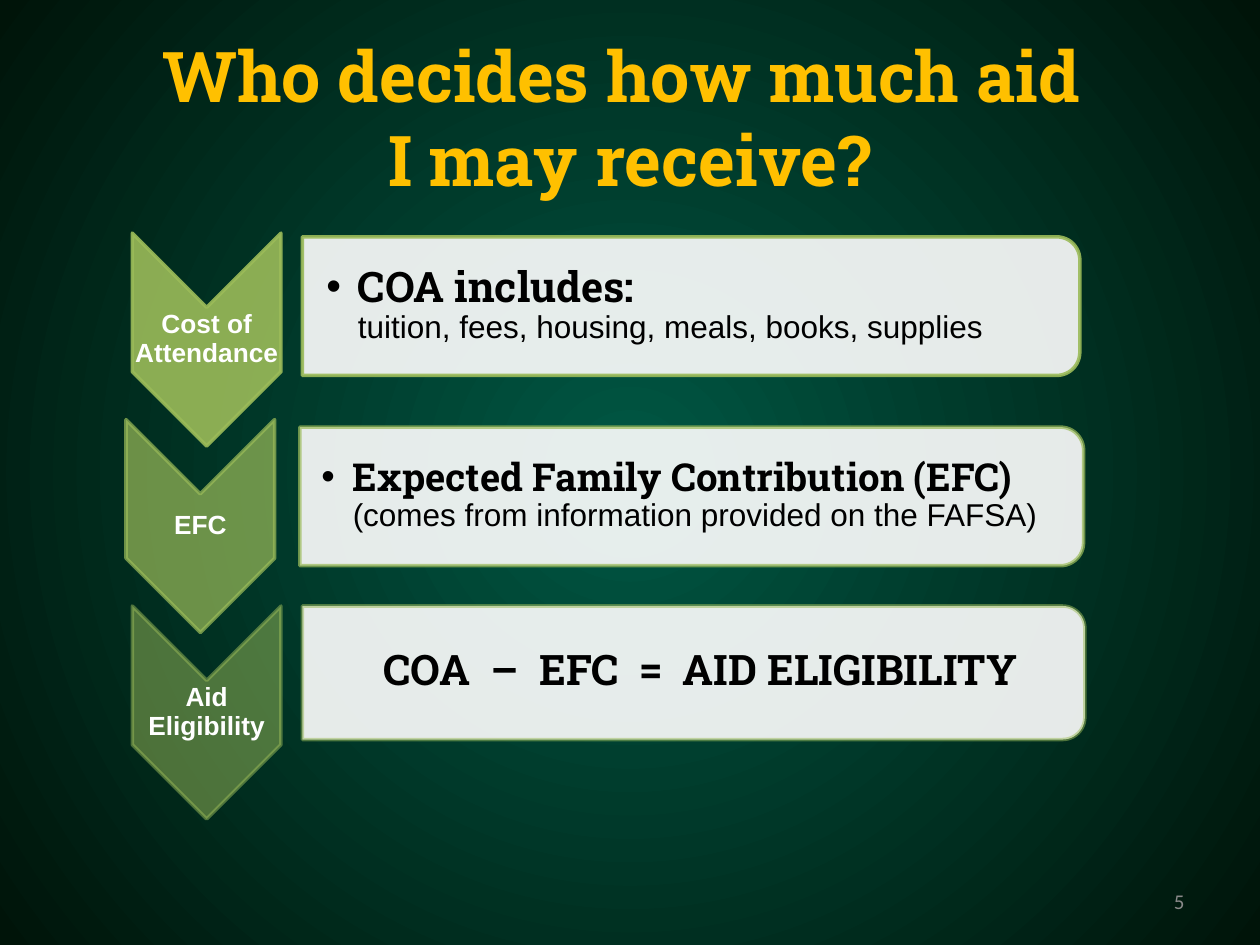
from lxml import etree
from pptx import Presentation
from pptx.dml.color import RGBColor
from pptx.enum.shapes import MSO_SHAPE
from pptx.enum.text import MSO_ANCHOR, PP_ALIGN
from pptx.oxml.ns import qn
from pptx.util import Inches, Pt

CHEVRON, PANEL = MSO_SHAPE.CHEVRON, MSO_SHAPE.ROUND_2_SAME_RECTANGLE
MIDDLE = MSO_ANCHOR.MIDDLE
LEFT, CENTER, RIGHT = PP_ALIGN.LEFT, PP_ALIGN.CENTER, PP_ALIGN.RIGHT
GREEN, WHITE, BLACK, GOLD, GREY = "9BBB59", "FFFFFF", "000000", "FFC000", "898989"
SLAB, SANS = "Roboto Slab", "Arial"


def color(hex_string):
    return RGBColor.from_string(hex_string)


def paint(fill, hex_string, opacity):
    fill.solid()
    fill.fore_color.rgb = color(hex_string)
    srgb = fill._xPr.find(f"{qn('a:solidFill')}/{qn('a:srgbClr')}")
    etree.SubElement(srgb, qn("a:alpha"), val=str(opacity * 1000))


def style_run(r, size, font, hex_string, bold=False):
    r.font.size, r.font.name, r.font.bold = Pt(size), font, bold
    r.font.color.rgb = color(hex_string)


def add_background(s):
    fill = s.background.fill
    fill.gradient()
    for stop, (position, hex_string) in zip(
            fill.gradient_stops, [(0.02, "005643"), (1, "001409")]):
        stop.position = position
        stop.color.rgb = color(hex_string)
    grad = s.element.find(f".//{qn('a:gradFill')}")
    grad.remove(grad.find(qn("a:lin")))
    circle = etree.SubElement(grad, qn("a:path"), path="circle")
    etree.SubElement(circle, qn("a:fillToRect"), l="50000", t="50000",
                     r="50000", b="50000")


def add_title(s, lines, left, top, width, height):
    title = s.shapes.title
    title.left, title.top = Inches(left), Inches(top)
    title.width, title.height = Inches(width), Inches(height)
    tf = title.text_frame
    tf.vertical_anchor = MIDDLE
    tf.text = "\v".join(lines)
    p = tf.paragraphs[0]
    p.alignment = CENTER
    for r in p.runs:
        style_run(r, 40, SLAB, GOLD, True)


def add_turned_shape(s, kind, left, top, width, height, fill, opacity, line_opacity):
    cx, cy = left + width / 2, top + height / 2
    sp = s.shapes.add_shape(kind, Inches(cx - height / 2), Inches(cy - width / 2),
                            Inches(height), Inches(width))
    sp.rotation = 90
    sp.shadow.inherit = False
    paint(sp.fill, fill, opacity)
    sp.line.width = Pt(2)
    paint(sp.line.fill, GREEN, line_opacity)


def add_text(s, left, top, width, height, align, margins=None):
    tf = s.shapes.add_textbox(Inches(left), Inches(top),
                              Inches(width), Inches(height)).text_frame
    tf.word_wrap = True
    tf.vertical_anchor = MIDDLE
    if margins:
        tf.margin_left = Inches(margins[0])
        tf.margin_top = tf.margin_right = tf.margin_bottom = Inches(margins[1])
    p = tf.paragraphs[0]
    p.alignment = align
    return p


def add_run(p, text, *style):
    r = p.add_run()
    r.text = text
    style_run(r, *style)


def add_step(s, label, left, top, opacity):
    width, height = 1.18, 1.69
    add_turned_shape(s, CHEVRON, left, top, width, height, GREEN, opacity, opacity)
    p = add_text(s, left, top + 0.59, width, 0.51, CENTER, (0.01, 0.01))
    p.line_spacing = 0.9
    add_run(p, label, 15, SANS, WHITE, True)


def add_panel(s, heading, size, detail, left, top, width, height, inset, opacity):
    add_turned_shape(s, PANEL, left, top, width, height, WHITE, 90, opacity)
    p = add_text(s, left, top + 0.05, width - 0.06, height - 0.11,
                 LEFT if detail else CENTER, (inset, 0.02))
    p.level = 1
    pPr = p._p.get_or_add_pPr()
    pPr.set("marL", str(Inches(0.25)))
    pPr.set("indent", str(Inches(-0.25)))
    if detail:
        etree.SubElement(pPr, qn("a:buFont"), typeface=SANS)
        etree.SubElement(pPr, qn("a:buChar"), char="•")
    p.line_spacing = 0.9
    add_run(p, heading, size, SLAB, BLACK, True)
    if detail:
        p.add_line_break()
        add_run(p, detail, 18, SANS, BLACK)


def add_slide_number(s, number, left, top, width, height):
    p = add_text(s, left, top, width, height, RIGHT)
    add_run(p, number, 12, "Calibri", GREY)


def main():
    prs = Presentation()
    prs.slide_width, prs.slide_height = Inches(10), Inches(7.5)
    s = prs.slides.add_slide(prs.slide_layouts[5])
    add_background(s)
    add_title(s, ["Who decides how much aid ", "I may receive?"], 0.5, 0.3, 9, 1.25)

    rows = [
        ("Cost of Attendance", 1.05, 90,
         ("COA includes: ", 24, "tuition, fees, housing, meals, books, supplies",
          2.4, 1.88, 6.17, 1.1, 0.19)),
        ("EFC", 1, 70,
         ("Expected Family Contribution (EFC) ", 22,
          "(comes from information provided on the FAFSA)",
          2.38, 3.39, 6.22, 1.1, 0.17)),
        ("Aid Eligibility", 1.05, 50,
         ("COA  –  EFC  =  AID ELIGIBILITY", 24, None,
          2.4, 4.81, 6.21, 1.06, 0.19)),
    ]
    for i, (label, left, opacity, panel) in enumerate(rows):
        add_step(s, label, left, 1.85 + 1.48 * i, opacity)
        add_panel(s, *panel, opacity)

    add_slide_number(s, "5", 7.17, 6.95, 2.33, 0.4)
    prs.save("out.pptx")


if __name__ == "__main__":
    main()
